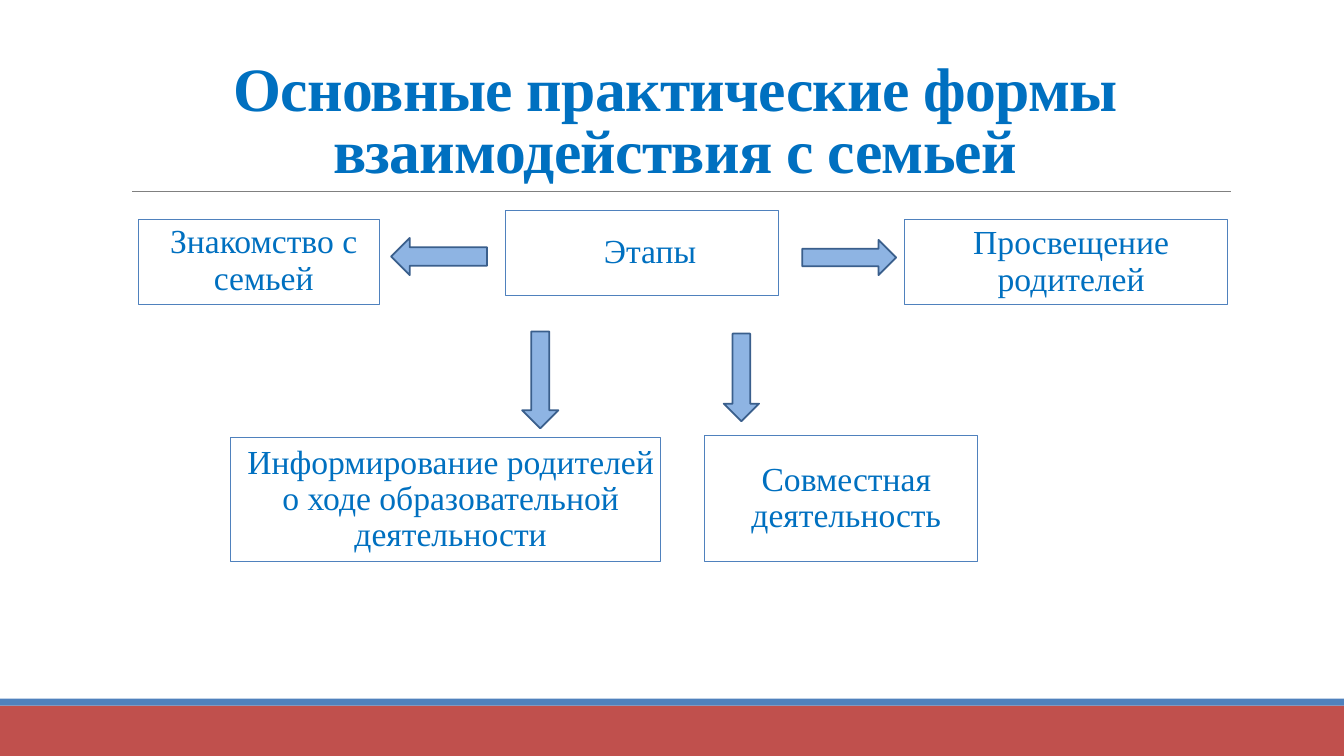
from dataclasses import dataclass

from lxml import etree
from pptx import Presentation
from pptx import util as u
from pptx.dml.color import RGBColor
from pptx.enum import shapes, text
from pptx.oxml import ns

WIDE, HIGH = u.Inches(13.33), u.Inches(7.5)
BLUE, STEEL, RED = "0070C0", "4F81BD", "C0504D"
SKY, NAVY, GREY = "8EB4E3", "3A5F8C", "808080"
FONT = "Times New Roman"
KIND = shapes.MSO_SHAPE
ANCHOR = text.MSO_ANCHOR


@dataclass(frozen=True)
class Area:
    col: float
    row: float
    cols: float
    rows: float

    def frame(self) -> tuple[int, int, int, int]:
        return across(self.col), down(self.row), across(self.cols), down(self.rows)


@dataclass(frozen=True)
class Stage:
    words: str
    area: Area
    anchor: ANCHOR = ANCHOR.MIDDLE


@dataclass(frozen=True)
class Arrow:
    kind: KIND
    area: Area


TITLE = Area(9, 4.13, 82.5, 21.2)
HUB = Stage("Этапы", Area(37.58, 27.87, 20.33, 11.2))
STAGES = [
    Stage("Знакомство с семьей", Area(10.28, 29.07, 17.93, 11.2), ANCHOR.TOP),
    Stage("Информирование родителей о ходе образовательной деятельности",
          Area(17.18, 57.87, 31.95, 16.4)),
    Stage("Просвещение родителей", Area(67.28, 29.07, 24.08, 11.2)),
    Stage("Совместная деятельность", Area(52.43, 57.6, 20.33, 16.67)),
]
ARROWS = [
    Arrow(KIND.LEFT_ARROW, Area(29.1, 31.47, 7.13, 4.93)),
    Arrow(KIND.DOWN_ARROW, Area(38.85, 43.87, 2.7, 12.8)),
    Arrow(KIND.RIGHT_ARROW, Area(59.7, 31.73, 6.98, 4.67)),
    Arrow(KIND.DOWN_ARROW, Area(53.85, 44.13, 2.63, 11.6)),
]
BANDS = [(RED, Area(0, 93.33, 100, 6.67)), (STEEL, Area(0, 92.4, 100, 0.93))]


def across(cols: float) -> int:
    return round(WIDE * cols / 100)


def down(rows: float) -> int:
    return round(HIGH * rows / 100)


def paint(item, code: str) -> None:
    item.solid()
    item.fore_color.rgb = RGBColor.from_string(code)


def edge(line, code: str, width: float) -> None:
    paint(line.fill, code)
    line.width = u.Pt(width)


def place(shape, area: Area) -> None:
    shape.left, shape.top, shape.width, shape.height = area.frame()


def write(shape, words: str, *, size: float, bold: bool = False,
          lead: float = 1, before: float = 0, after: float = 0,
          anchor: ANCHOR = ANCHOR.MIDDLE):
    body = shape.text_frame
    body.word_wrap = True
    body.auto_size = text.MSO_AUTO_SIZE.NONE
    body.vertical_anchor = anchor
    para = body.paragraphs[0]
    para.alignment = text.PP_ALIGN.CENTER
    para.line_spacing = lead
    para.space_before, para.space_after = u.Pt(before), u.Pt(after)
    run = para.add_run()
    run.text = words
    run.font.name, run.font.size, run.font.bold = FONT, u.Pt(size), bold
    paint(run.font.fill, BLUE)
    return para, run


def bullet(para) -> None:
    props = para._p.get_or_add_pPr()
    props.set("marL", "91440")
    props.set("indent", "-91440")
    tint = etree.SubElement(props, ns.qn("a:buClr"))
    etree.SubElement(tint, ns.qn("a:srgbClr"), val=STEEL)
    etree.SubElement(props, ns.qn("a:buChar"), char=" ")


def block(slide, kind: KIND, area: Area):
    shape = slide.shapes.add_shape(kind, *area.frame())
    shape.shadow.inherit = False
    return shape


def box(shape, stage: Stage) -> None:
    place(shape, stage.area)
    shape.fill.background()
    edge(shape.line, STEEL, 0.75)
    body = shape.text_frame
    body.margin_left = body.margin_right = 0
    body.margin_top = body.margin_bottom = u.Inches(0.05)
    para, _ = write(shape, stage.words, size=24, lead=0.9, before=12, after=2,
                    anchor=stage.anchor)
    bullet(para)


def rule(slide) -> None:
    line = slide.shapes.add_connector(
        shapes.MSO_CONNECTOR.STRAIGHT,
        across(9.83), down(25.33), across(91.58), down(25.33))
    edge(line.line, GREY, 0.5)
    etree.SubElement(line._element.spPr, ns.qn("a:effectLst"))


def head(shape) -> None:
    place(shape, TITLE)
    _, run = write(shape, "Основные практические формы взаимодействия с семьей",
                   size=44, bold=True, lead=0.85, anchor=ANCHOR.BOTTOM)
    run.font._element.set("spc", "-50")


def main() -> None:
    deck = Presentation()
    deck.slide_width, deck.slide_height = WIDE, HIGH
    slide = deck.slides.add_slide(deck.slide_layouts.get_by_name("Comparison"))
    head(slide.shapes.title)
    for code, area in BANDS:
        band = block(slide, KIND.RECTANGLE, area)
        paint(band.fill, code)
        band.line.fill.background()
    rule(slide)
    box(block(slide, KIND.RECTANGLE, HUB.area), HUB)
    slots = list(slide.placeholders)[1:]
    for slot, stage in zip(slots, STAGES):
        box(slot, stage)
    for arrow in ARROWS:
        shape = block(slide, arrow.kind, arrow.area)
        paint(shape.fill, SKY)
        edge(shape.line, NAVY, 1.25)
    deck.save("out.pptx")


if __name__ == "__main__":
    main()
